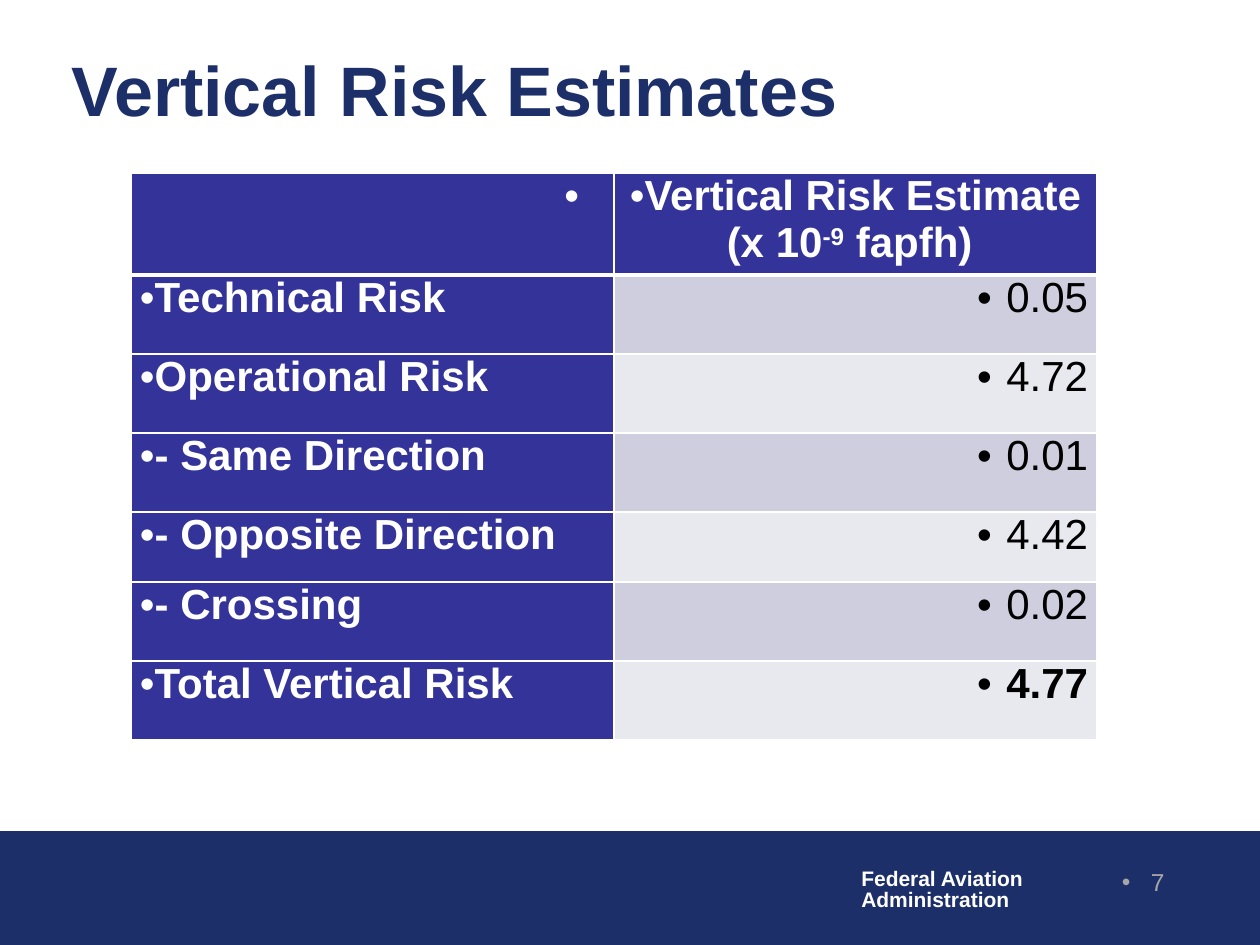
from lxml import etree
from pptx import Presentation, util as u
from pptx.dml.color import RGBColor
from pptx.enum import shapes, text
from pptx.oxml import ns

PX = 914400 // 126
NAVY, INDIGO, WHITE, BLACK = "1D2F68", "333399", "FFFFFF", "000000"
BANDS = ["CECEDE", "E8E8EF"]
LEFT, CENTER, RIGHT = text.PP_ALIGN.LEFT, text.PP_ALIGN.CENTER, text.PP_ALIGN.RIGHT


def rgb(value):
    return RGBColor.from_string(value)


def write(p, runs, size, color, bold=False, align=LEFT, bullet=False):
    """Fill a paragraph with (text, baseline) runs sharing one format."""
    p.alignment = align
    if bullet:
        hang = 29 * PX if align == RIGHT else 0
        pPr = p._p.get_or_add_pPr()
        pPr.set("marL", str(hang))
        pPr.set("indent", str(-hang))
        etree.SubElement(pPr, ns.qn("a:buFont")).set("typeface", "Arial")
        etree.SubElement(pPr, ns.qn("a:buChar")).set("char", "•")
    for words, baseline in runs:
        r = p.add_run()
        r.text = words
        for name, value in {"name": "Arial", "size": u.Pt(size), "bold": bold}.items():
            setattr(r.font, name, value)
        r.font.color.rgb = rgb(color)
        if baseline:
            r.font._element.set("baseline", str(baseline))


prs = Presentation()
prs.slide_width, prs.slide_height = u.Inches(10), u.Inches(7.5)
s = prs.slides.add_slide(prs.slide_layouts[6])

# Footer band
band = s.shapes.add_shape(shapes.MSO_SHAPE.RECTANGLE, 0, 832 * PX, prs.slide_width, 112 * PX)
band.shadow.inherit = False
band.fill.solid()
band.fill.fore_color.rgb = rgb(NAVY)
band.line.color.rgb = rgb(NAVY)
band.line.width = u.Pt(0.75)

# Title, agency name and page number
boxes = [
    ((59, 47, 1168, 84), ["Vertical Risk Estimates"],
     dict(size=40, color=NAVY, bold=True), text.MSO_ANCHOR.MIDDLE, 1),
    ((849, 863, 189, 55), ["Federal Aviation", "Administration"],
     dict(size=12, color=WHITE, bold=True), text.MSO_ANCHOR.TOP, 0.85),
    ((1056, 861, 121, 63), ["7"],
     dict(size=14, color="A6A6A6", align=RIGHT, bullet=True), text.MSO_ANCHOR.TOP, 1),
]
for box, lines, style, anchor, spacing in boxes:
    tf = s.shapes.add_textbox(*(v * PX for v in box)).text_frame
    tf.word_wrap = True
    tf.vertical_anchor = anchor
    for i, line in enumerate(lines):
        p = tf.add_paragraph() if i else tf.paragraphs[0]
        p.line_spacing = spacing
        write(p, [(line, 0)], **style)

# Risk table
header = [("Vertical Risk Estimate (x 10", 0), ("-9", 30000), (" fapfh) ", 0)]
risks = [
    ("Technical Risk", "0.05"),
    ("Operational Risk", "4.72"),
    ("- Same Direction", "0.01"),
    ("- Opposite Direction", "4.42"),
    ("- Crossing", "0.02"),
    ("Total Vertical Risk", "4.77"),
]
rows = [([(" ", 0)], header)] + [([(name, 0)], [(value, 0)]) for name, value in risks]
heights = [102, 79, 79, 79, 70, 79, 79]
table = s.shapes.add_table(len(rows), 2, 131 * PX, 173 * PX, 966 * PX, sum(heights) * PX).table
for col in table.columns:
    col.width = 483 * PX
for i, (row, height) in enumerate(zip(rows, heights)):
    table.rows[i].height = height * PX
    for j, runs in enumerate(row):
        cell = table.cell(i, j)
        cell.margin_left = cell.margin_right = 9 * PX
        cell.margin_top = cell.margin_bottom = 0
        tcPr = cell._tc.get_or_add_tcPr()
        for side in "LRTB":
            thick = (i, side) in [(0, "B"), (1, "T")]
            ln = etree.SubElement(tcPr, ns.qn(f"a:ln{side}"), w=str(u.Pt(3 if thick else 1)))
            fill = etree.SubElement(ln, ns.qn("a:solidFill"))
            etree.SubElement(fill, ns.qn("a:srgbClr"), val=WHITE)
        is_value = i > 0 and j == 1
        cell.fill.solid()
        cell.fill.fore_color.rgb = rgb(BANDS[(i - 1) % 2] if is_value else INDIGO)
        if i == 0:
            align = (RIGHT, CENTER)[j]
        else:
            align = (LEFT, RIGHT)[j]
        p = cell.text_frame.paragraphs[0]
        p.space_after = u.Pt(12)
        write(p, runs, 24, BLACK if is_value else WHITE,
              bold=not is_value or i == len(risks), align=align, bullet=True)

prs.save("out.pptx")
